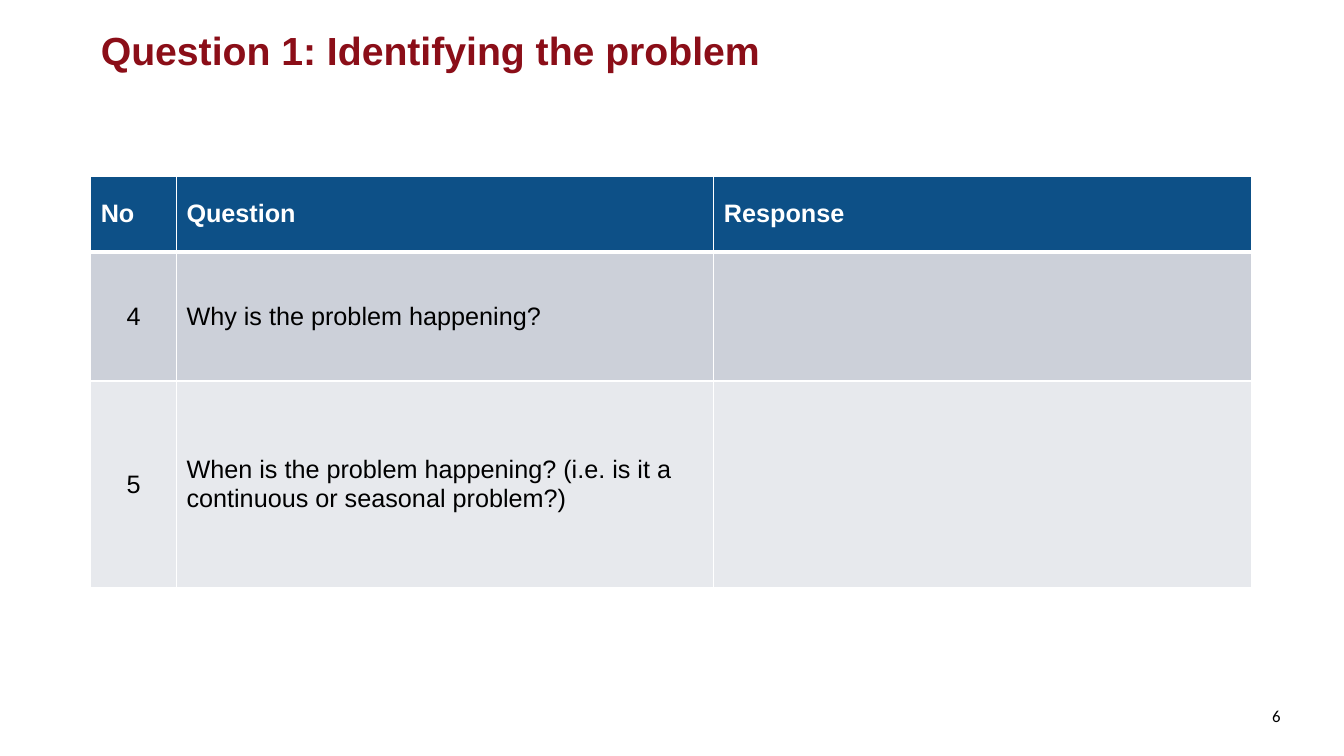
"""Build the problem identification question slide."""
import pptx
import pptx.util
import pptx.dml.color
import pptx.enum.text
import lxml.etree
from pptx.oxml.ns import qn

TITLE = "Question 1: Identifying the problem"
PAGE = "6"
ROWS = [
    ("No", "Question", "Response"),
    ("4", "Why is the problem happening?", ""),
    ("5", "When is the problem happening? (i.e. is it a continuous or seasonal problem?)", ""),
]
WIDTHS = [0.85, 5.33, 5.33]
HEIGHTS = [0.75, 1.28, 2.05]
FILLS = ["0D5087", "CCD0D9", "E7E9ED"]
LEFT, TOP, WIDE = 0.9, 1.75, sum(WIDTHS)
RED, WHITE, BLACK = "8B0E18", "FFFFFF", "000000"

Inches = pptx.util.Inches
ALIGN = pptx.enum.text.PP_ALIGN
MIDDLE = pptx.enum.text.MSO_ANCHOR.MIDDLE


def color(code):
    """Turn a hex string into a colour."""
    return pptx.dml.color.RGBColor.from_string(code)


def write(frame, text, size=18, face="Arial", ink=BLACK, bold=False, align=ALIGN.LEFT):
    """Put formatted text in a frame."""
    frame.word_wrap = True
    frame.vertical_anchor = MIDDLE
    para = frame.paragraphs[0]
    para.alignment = align
    run = para.add_run()
    run.text = text
    font = run.font
    font.size = pptx.util.Pt(size)
    font.name = face
    font.bold = bold
    font.color.rgb = color(ink)


def place(shape, left, top, width, height):
    """Move and size a shape in inches."""
    shape.left, shape.top = Inches(left), Inches(top)
    shape.width, shape.height = Inches(width), Inches(height)


def edge(cell, widths):
    """Draw white cell borders with the given point widths."""
    props = cell._tc.get_or_add_tcPr()
    for side, width in widths.items():
        line = lxml.etree.SubElement(props, qn("a:ln" + side), w=str(pptx.util.Pt(width)))
        fill = lxml.etree.SubElement(line, qn("a:solidFill"))
        lxml.etree.SubElement(fill, qn("a:srgbClr"), val=WHITE)


def grid(slide):
    """Add the question table."""
    frame = slide.shapes.add_table(
        len(ROWS), len(WIDTHS), Inches(LEFT), Inches(TOP), Inches(WIDE), Inches(sum(HEIGHTS)))
    table = frame.table
    for col, width in zip(table.columns, WIDTHS):
        col.width = Inches(width)
    for r, texts in enumerate(ROWS):
        table.rows[r].height = Inches(HEIGHTS[r])
        head = r == 0
        for c, text in enumerate(texts):
            cell = table.cell(r, c)
            edge(cell, {"L": 1, "R": 1, "T": 3 if r == 1 else 1, "B": 3 if head else 1})
            cell.fill.solid()
            cell.fill.fore_color.rgb = color(FILLS[r])
            cell.vertical_anchor = MIDDLE
            if text:
                mid = c == 0 and not head
                write(cell.text_frame, text, ink=WHITE if head else BLACK, bold=head,
                      align=ALIGN.CENTER if mid else ALIGN.LEFT)


def main():
    """Build and save the slide."""
    deck = pptx.Presentation()
    deck.slide_width, deck.slide_height = Inches(13.33), Inches(7.5)
    slide = deck.slides.add_slide(deck.slide_layouts[5])
    title = slide.shapes.title
    place(title, LEFT, 0.27, WIDE, 0.45)
    write(title.text_frame, TITLE, size=28, ink=RED, bold=True)
    grid(slide)
    page = slide.shapes.add_textbox(Inches(12.04), Inches(6.91), Inches(0.76), Inches(0.39))
    write(page.text_frame, PAGE, size=12, face="Calibri", align=ALIGN.RIGHT)
    deck.save("out.pptx")


if __name__ == "__main__":
    main()
